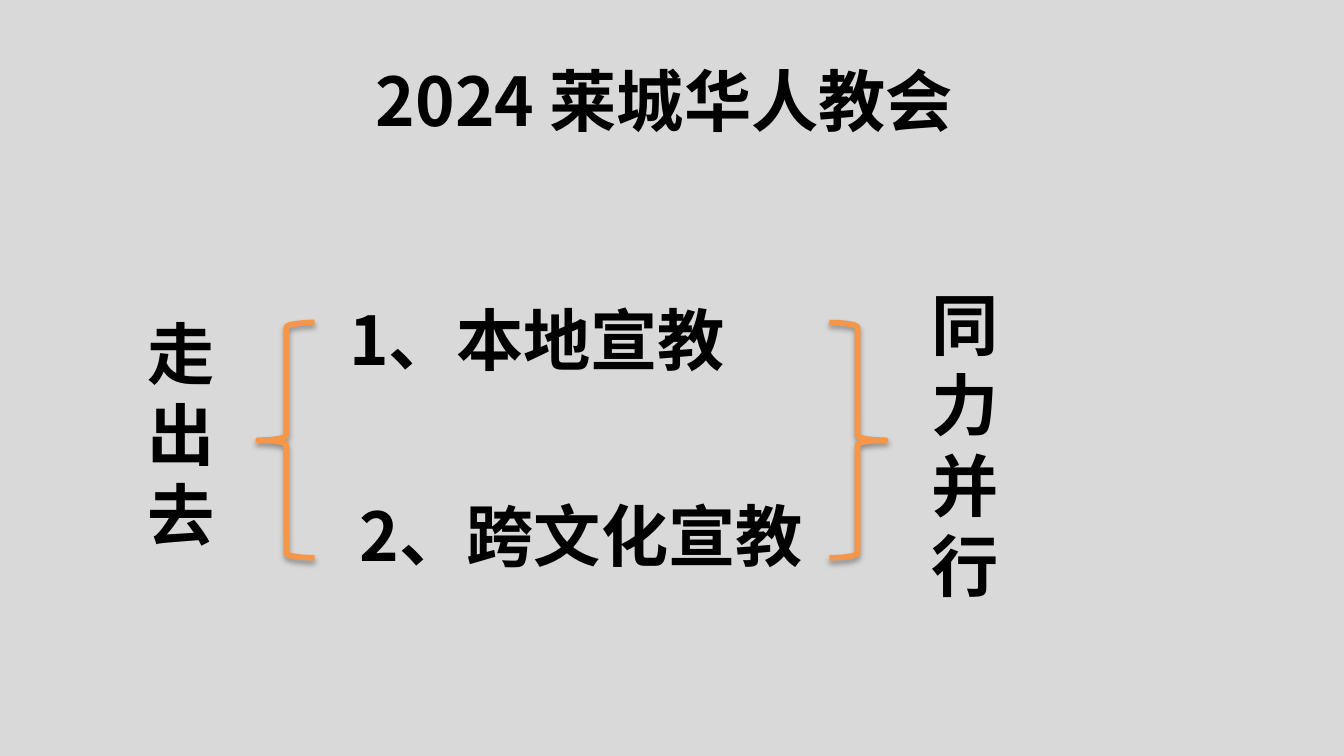
from dataclasses import dataclass

from lxml import etree
from pptx import Presentation
from pptx.dml.color import RGBColor
from pptx.enum import shapes, text
from pptx.oxml import ns
from pptx.util import Inches, Pt


@dataclass(frozen=True)
class Theme:
    font: str = "Noto Sans CJK SC"
    size: int = 36
    column_pitch: int = 43
    ink: RGBColor = RGBColor(0, 0, 0)
    background: RGBColor = RGBColor(0xD9, 0xD9, 0xD9)
    brace: RGBColor = RGBColor(0xF7, 0x96, 0x46)
    brace_width: int = 3


THEME = Theme()


def place(s, box):
    s.left, s.top, s.width, s.height = (Inches(v) for v in box)


def write(s, words, align=text.PP_ALIGN.LEFT, pitch=None):
    """Fill a text shape with one bold, vertically centred paragraph."""
    tf = s.text_frame
    tf.word_wrap = True
    tf.vertical_anchor = text.MSO_ANCHOR.MIDDLE
    tf.text = words
    p = tf.paragraphs[0]
    p.alignment = align
    if pitch:
        p.line_spacing = Pt(pitch)
    font = p.runs[0].font
    font.name, font.size, font.bold = THEME.font, Pt(THEME.size), True
    font.color.rgb = THEME.ink
    # East Asian characters take their own typeface
    ea = etree.Element(ns.qn("a:ea"), typeface=THEME.font)
    p.runs[0]._r.rPr.find(ns.qn("a:latin")).addnext(ea)


def add_label(slide, box, words, pitch=None):
    s = slide.shapes.add_textbox(*(Inches(v) for v in box))
    write(s, words, pitch=pitch)


def add_brace(slide, box, rotation=0):
    s = slide.shapes.add_shape(shapes.MSO_SHAPE.LEFT_BRACE,
                               *(Inches(v) for v in box))
    s.rotation = rotation
    s.fill.background()
    s.line.color.rgb = THEME.brace
    s.line.width = Pt(THEME.brace_width)
    # Soft shadow straight below
    s.shadow.inherit = False
    effects = s._element.spPr.find(ns.qn("a:effectLst"))
    shadow = etree.SubElement(effects, ns.qn("a:outerShdw"),
                              blurRad=str(Pt(3.1)), dist=str(Pt(1.8)),
                              dir="5400000", rotWithShape="0")
    color = etree.SubElement(shadow, ns.qn("a:srgbClr"), val="000000")
    etree.SubElement(color, ns.qn("a:alpha"), val="35000")


def add_title(slide, box, words):
    s = slide.shapes.title
    place(s, box)
    write(s, words, text.PP_ALIGN.CENTER)


def add_mission_diagram(slide, box):
    """Two missions held between braces, with a vertical phrase on each side."""
    x, y, w, h = box
    # Vertical phrases
    add_label(slide, (x, y, 1.08, h), "走出去", THEME.column_pitch)
    add_label(slide, (x + w - 0.58, y + 0.59, 0.58, 3.31), "同力并行",
              THEME.column_pitch)
    # Missions
    add_label(slide, (x + 1.5, y + 1, 4.42, 0.92), "1、本地宣教")
    add_label(slide, (x + 1.58, y + 2.25, 4.83, 1.33), "2、跨文化宣教")
    # Braces
    for dx, rotation in ((0.92, 0), (5.17, 180)):
        add_brace(slide, (x + dx, y + 1.34, 0.42, 1.75), rotation)


def main():
    prs = Presentation()
    # Widescreen, 16 to 9
    prs.slide_width = Inches(10)
    prs.slide_height = prs.slide_width * 9 // 16
    slide = prs.slides.add_slide(prs.slide_layouts.get_by_name("Title Only"))
    slide.background.fill.solid()
    slide.background.fill.fore_color.rgb = THEME.background
    add_title(slide, (0, 0, 10, 1.48), "2024 莱城华人教会 ")
    add_mission_diagram(slide, (1, 1.06, 6.41, 4.33))
    prs.save("out.pptx")


if __name__ == "__main__":
    main()
